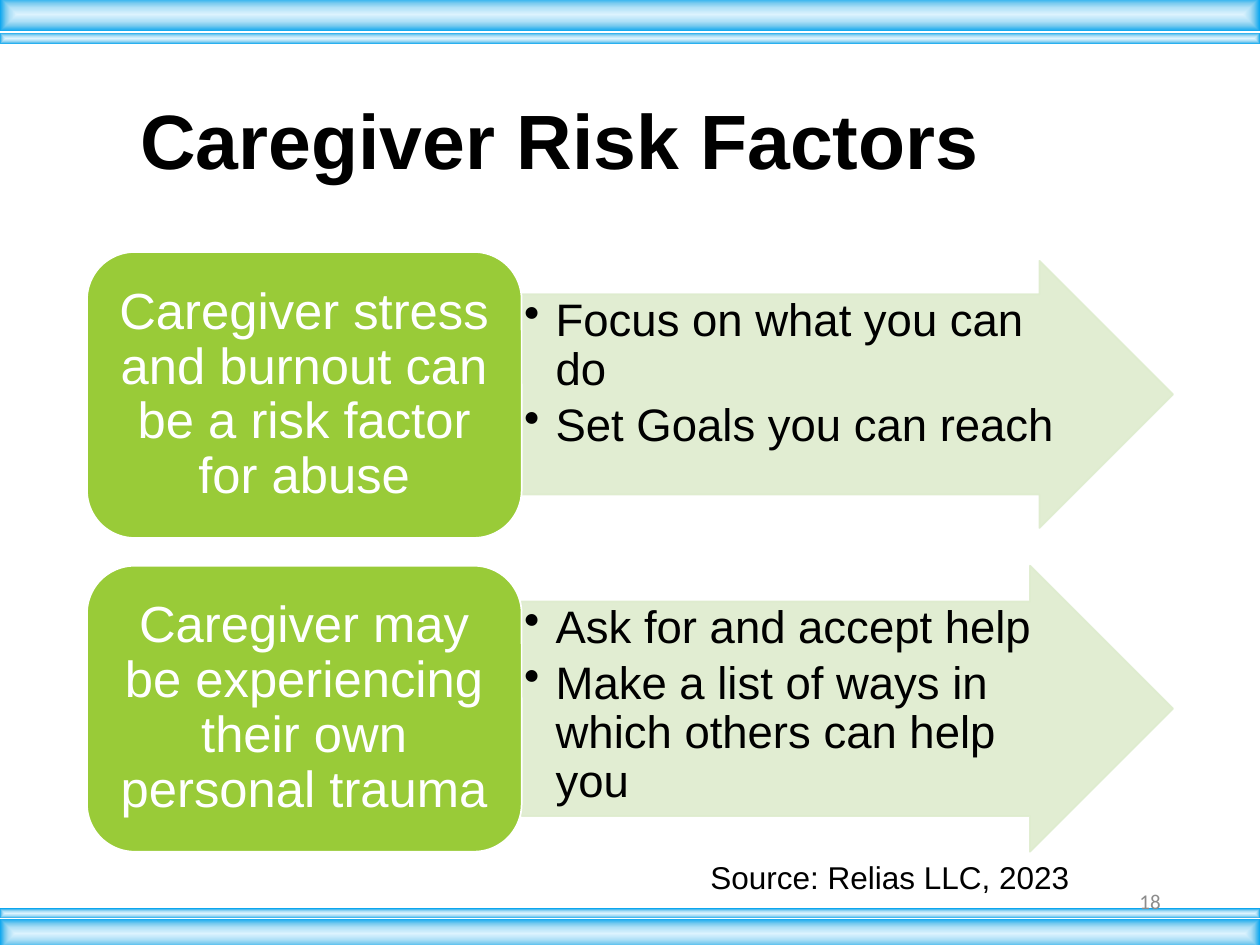
from lxml.etree import SubElement
from pptx import Presentation
from pptx.dml.color import RGBColor
from pptx.enum.shapes import MSO_SHAPE as SHAPE
from pptx.enum.text import MSO_ANCHOR as ANCHOR, MSO_AUTO_SIZE as AUTOSIZE, PP_ALIGN as ALIGN
from pptx.oxml import parse_xml
from pptx.oxml.ns import nsdecls, qn
from pptx.util import Inches, Pt

BLACK = RGBColor(0x00, 0x00, 0x00)
WHITE = RGBColor(0xFF, 0xFF, 0xFF)
GREEN = RGBColor(0x99, 0xCB, 0x38)
PALE_GREEN = RGBColor(0xDE, 0xEC, 0xCE)
GRAY = RGBColor(0x8C, 0x8C, 0x8C)
BAR_STOPS = [(0, "DCF3FE"), (40, "AFE0F7"), (64, "7ECCEF"), (100, "08A5EF")]

TITLE = "Caregiver Risk Factors"
SOURCE = "Source: Relias LLC, 2023"
PAGE = "18"
# risk, advice, arrow top, arrow height
ROWS = [
    ("Caregiver stress and burnout can be a risk factor for abuse",
     ["Focus on what you can do", "Set Goals you can reach"], 2.07, 2.12),
    ("Caregiver may be experiencing their own personal trauma",
     ["Ask for and accept help", "Make a list of ways in which others can help you"], 4.49, 2.27),
]
BARS = [(0.26, 0.09), (-0.02, 0.27), (7.21, 0.08), (7.29, 0.24)]  # top, height

BOX_LEFT, BOX_TOP, BOX_W, BOX_H, ROW_STEP = 0.69, 2.0, 3.45, 2.27, 2.49
ARROW_W = 5.17


def place(sp, left, top, width, height):
    sp.left, sp.top, sp.width, sp.height = map(Inches, (left, top, width, height))


def set_frame(tf, anchor, x_inset=0.1, y_inset=0.05):
    tf.word_wrap = True
    tf.vertical_anchor = anchor
    tf.margin_left = tf.margin_right = Inches(x_inset)
    tf.margin_top = tf.margin_bottom = Inches(y_inset)


def write(p, text, size, color, align=ALIGN.LEFT, font="Arial", bold=False):
    p.alignment = align
    r = p.add_run()
    r.text = text
    r.font.name, r.font.size, r.font.bold = font, Pt(size), bold
    r.font.color.rgb = color


def add_shape(s, kind, box, fill, line):
    sp = s.shapes.add_shape(kind, *map(Inches, box))
    sp.shadow.inherit = False
    sp.fill.solid()
    sp.fill.fore_color.rgb = fill
    sp.line.color.rgb = line
    sp.line.width = Pt(1)
    return sp


def add_label(s, box, text, size, color, anchor, align, font="Arial"):
    tf = s.shapes.add_textbox(*map(Inches, box)).text_frame
    set_frame(tf, anchor)
    write(tf.paragraphs[0], text, size, color, align, font)


def add_bullet(p):
    pPr = p._p.get_or_add_pPr()
    pPr.set("marL", str(Inches(0.25)))
    pPr.set("indent", str(-Inches(0.25)))
    SubElement(pPr, qn("a:buChar")).set("char", "•")


def add_arrow(s, top, height, advice):
    sp = add_shape(s, SHAPE.RIGHT_ARROW, (BOX_LEFT + BOX_W, top, ARROW_W, height),
                   PALE_GREEN, PALE_GREEN)
    sp.adjustments[0], sp.adjustments[1] = 0.75, 0.5
    for clr in sp._element.spPr.iter(qn("a:srgbClr")):
        SubElement(clr, qn("a:alpha")).set("val", "90000")
    tf = sp.text_frame
    set_frame(tf, ANCHOR.TOP, 0.02, 0.02)
    for i, text in enumerate(advice):
        p = tf.add_paragraph() if i else tf.paragraphs[0]
        add_bullet(p)
        p.line_spacing, p.space_after = 0.9, Pt(4)
        write(p, text, 26, BLACK)


def add_risk(s, top, text):
    sp = add_shape(s, SHAPE.ROUNDED_RECTANGLE, (BOX_LEFT, top, BOX_W, BOX_H), GREEN, WHITE)
    set_frame(sp.text_frame, ANCHOR.MIDDLE, 0.12, 0.06)
    p = sp.text_frame.paragraphs[0]
    p.line_spacing = 0.9
    write(p, text, 29, WHITE, ALIGN.CENTER)


def add_bar(s, top, height):
    """Full-width bar whose gradient runs from the centre to the edges."""
    sp = s.shapes.add_shape(SHAPE.RECTANGLE, 0, Inches(top), Inches(10), Inches(height))
    sp.shadow.inherit = False
    sp.line.fill.background()
    sp.fill.background()
    stops = "".join(f'<a:gs pos="{pos * 1000}"><a:srgbClr val="{clr}"/></a:gs>'
                    for pos, clr in BAR_STOPS)
    grad = parse_xml(
        f'<a:gradFill {nsdecls("a")} rotWithShape="1"><a:gsLst>{stops}</a:gsLst>'
        '<a:path path="rect"><a:fillToRect l="50000" t="50000" r="50000" b="50000"/>'
        '</a:path></a:gradFill>')
    spPr = sp._element.spPr
    spPr.replace(spPr.find(qn("a:noFill")), grad)


def main():
    prs = Presentation()
    prs.slide_width, prs.slide_height = Inches(10), Inches(7.5)
    s = prs.slides.add_slide(prs.slide_layouts[5])

    title = s.shapes.title
    place(title, 0.58, 0.42, 7.73, 1.45)
    tf = title.text_frame
    set_frame(tf, ANCHOR.MIDDLE)
    tf.auto_size = AUTOSIZE.NONE
    p = tf.paragraphs[0]
    p.line_spacing, p.space_after = 0.9, Pt(4.5)
    write(p, TITLE, 44, BLACK, ALIGN.CENTER, bold=True)

    for i, (risk, advice, top, height) in enumerate(ROWS):
        add_arrow(s, top, height, advice)
        add_risk(s, BOX_TOP + i * ROW_STEP, risk)

    add_label(s, (5.54, 6.76, 4.38, 0.4), SOURCE, 18, BLACK, ANCHOR.TOP, ALIGN.LEFT)
    for top, height in BARS:
        add_bar(s, top, height)
    add_label(s, (7.06, 6.95, 2.25, 0.4), PAGE, 12, GRAY, ANCHOR.MIDDLE, ALIGN.RIGHT, "Calibri")

    prs.save("out.pptx")


if __name__ == "__main__":
    main()
